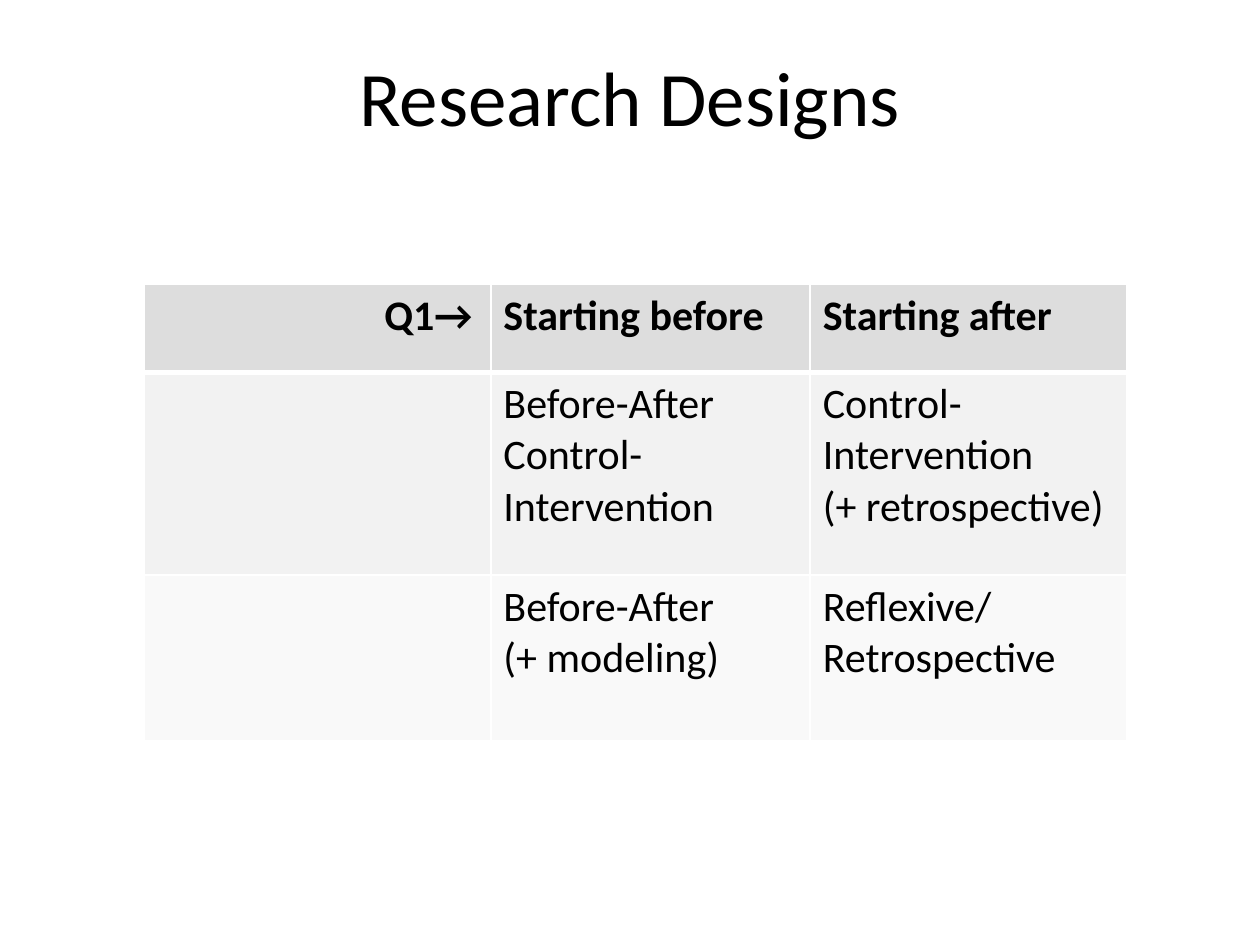
from dataclasses import dataclass

from lxml.etree import SubElement
from pptx import Presentation
from pptx.dml.color import RGBColor
from pptx.enum.text import MSO_ANCHOR, PP_ALIGN
from pptx.oxml.ns import qn
from pptx.util import Pt


@dataclass(frozen=True)
class Theme:
    font: str = "Calibri"
    ink: str = "000000"
    border: str = "FFFFFF"
    row_fills: tuple = ("DDDDDD", "F2F2F2", "F9F9F9")
    title_size: int = 44
    table_size: int = 24


@dataclass(frozen=True)
class Box:
    left: float
    top: float
    width: float
    height: float

    def lengths(self):
        return [Pt(value) for value in (self.left, self.top, self.width, self.height)]


THEME = Theme()
COLUMN_WIDTHS = (198, 182.5, 181)
ROW_HEIGHTS = (50.4, 115.9, 94.5)
DESIGNS = (
    ("Q1→", "Starting before", "Starting after"),
    ("", "Before-After Control-Intervention", "Control-Intervention\n(+ retrospective)"),
    ("", "Before-After\n(+ modeling)", "Reflexive/ Retrospective"),
)


def write_text(frame, text, size, bold=False, align=PP_ALIGN.LEFT):
    frame.word_wrap = True
    for index, line in enumerate(text.split("\n")):
        para = frame.paragraphs[0] if index == 0 else frame.add_paragraph()
        para.alignment = align
        span = para.add_run()
        span.text = line
        span.font.name = THEME.font
        span.font.size = Pt(size)
        span.font.bold = bold
        span.font.color.rgb = RGBColor.from_string(THEME.ink)


def set_borders(cell, bottom_width):
    properties = cell._tc.get_or_add_tcPr()
    widths = {"a:lnL": 1, "a:lnR": 1, "a:lnT": 1, "a:lnB": bottom_width}
    for position, (side, width) in enumerate(widths.items()):
        line = SubElement(properties, qn(side), w=str(Pt(width)))
        fill = SubElement(line, qn("a:solidFill"))
        SubElement(fill, qn("a:srgbClr"), val=THEME.border)
        properties.insert(position, line)


def place_title(page, box):
    title = page.shapes.title
    title.left, title.top, title.width, title.height = box.lengths()
    frame = title.text_frame
    frame.vertical_anchor = MSO_ANCHOR.TOP
    frame.margin_top = Pt(6.5)
    write_text(frame, "Research Designs", THEME.title_size, align=PP_ALIGN.CENTER)


def place_design_table(page, box):
    table = page.shapes.add_table(
        len(ROW_HEIGHTS), len(COLUMN_WIDTHS), *box.lengths()
    ).table
    table.horz_banding = False
    for column, width in zip(table.columns, COLUMN_WIDTHS):
        column.width = Pt(width)
    for row_index, (row, height) in enumerate(zip(table.rows, ROW_HEIGHTS)):
        row.height = Pt(height)
        is_header = row_index == 0
        for column_index, text in enumerate(DESIGNS[row_index]):
            cell = table.cell(row_index, column_index)
            cell.fill.solid()
            cell.fill.fore_color.rgb = RGBColor.from_string(THEME.row_fills[row_index])
            set_borders(cell, bottom_width=3 if is_header else 1)
            if text:
                is_corner = is_header and column_index == 0
                if is_corner:
                    cell.margin_right = Pt(10.5)
                align = PP_ALIGN.RIGHT if is_corner else PP_ALIGN.LEFT
                write_text(cell.text_frame, text, THEME.table_size, is_header, align)


def main():
    deck = Presentation()
    deck.slide_width, deck.slide_height = Pt(720), Pt(540)
    page = deck.slides.add_slide(deck.slide_layouts[5])
    place_title(page, Box(36, 21.6, 648, 90))
    place_design_table(page, Box(82.5, 162.4, sum(COLUMN_WIDTHS), sum(ROW_HEIGHTS)))
    deck.save("out.pptx")


if __name__ == "__main__":
    main()
